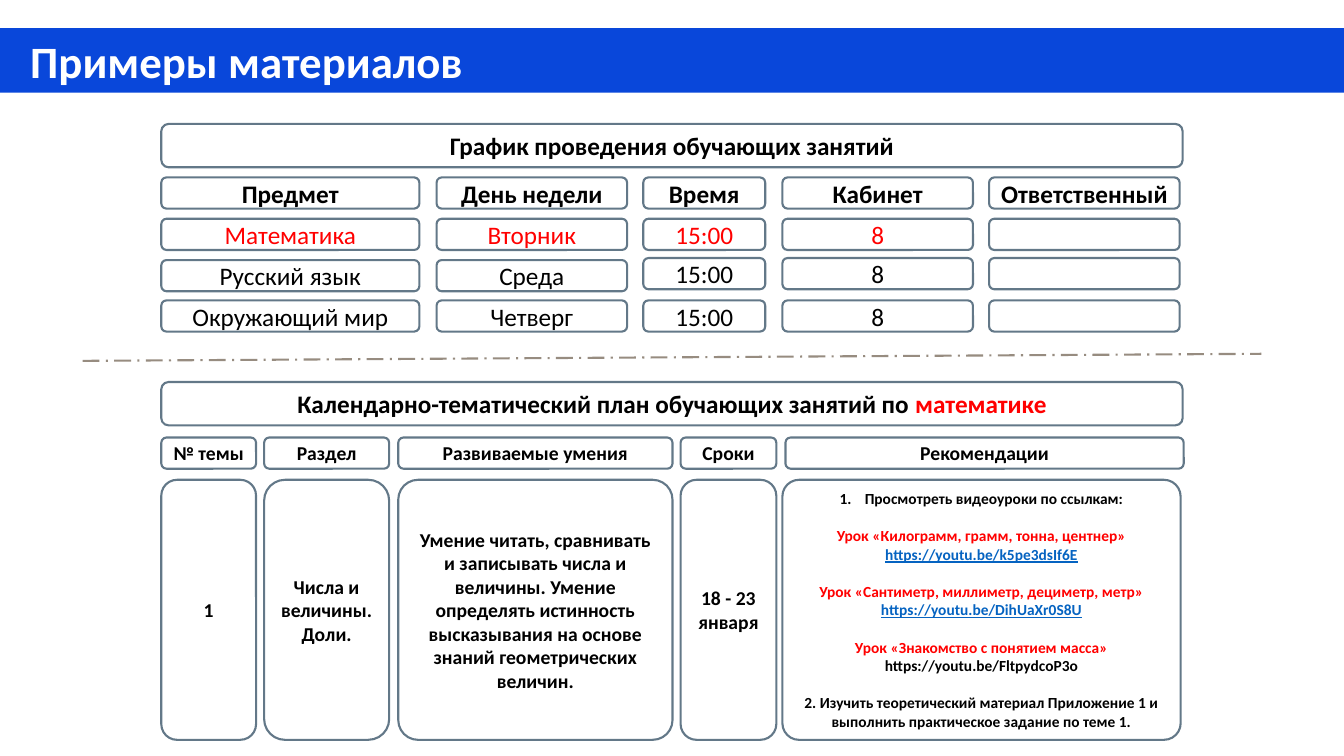
from dataclasses import dataclass
from typing import Any, Optional

from lxml.etree import SubElement
from pptx import Presentation
from pptx.dml.color import RGBColor
from pptx.enum.dml import MSO_LINE
from pptx.enum.shapes import MSO_CONNECTOR, MSO_SHAPE
from pptx.enum.text import MSO_ANCHOR, MSO_AUTO_SIZE, PP_ALIGN
from pptx.oxml.ns import qn
from pptx.util import Emu, Pt

EMU_PER_PX = 9144
COLORS = {
    "banner": "0947DA",
    "border": "637888",
    "divider": "978C80",
    "text": "000000",
    "accent": "FF0000",
    "link": "0563C1",
    "white": "FFFFFF",
}


@dataclass(frozen=True)
class Span:
    text: str
    color: str = "text"
    underline: bool = False


@dataclass(frozen=True)
class Line:
    spans: tuple[Span, ...]
    space_before: float = 0
    numbered: bool = False


@dataclass(frozen=True)
class Column:
    left: int
    width: int


@dataclass(frozen=True)
class ScheduleRow:
    top: int
    right_top: int
    values: tuple[str, ...]
    color: str = "text"
    bold: bool = False


@dataclass(frozen=True)
class Box:
    left: int
    top: int
    width: int
    height: int
    lines: tuple[Line, ...]
    size: int = 14
    bold: bool = True
    wrap: bool = False
    corner: Optional[float] = None


def px(value: int) -> Emu:
    return Emu(value * EMU_PER_PX)


def rgb(name: str) -> RGBColor:
    return RGBColor.from_string(COLORS[name])


def set_values(target: Any, values: dict[str, Any]) -> None:
    for name, value in values.items():
        setattr(target, name, value)


def line(text: str, color: str = "text", underline: bool = False,
         space_before: float = 0, numbered: bool = False) -> Line:
    return Line((Span(text, color, underline),), space_before, numbered)


def number_paragraph(paragraph: Any) -> None:
    properties = paragraph._p.get_or_add_pPr()
    properties.set("marL", str(px(25)))
    properties.set("indent", str(px(-25)))
    SubElement(properties, qn("a:buFont"), typeface="+mj-lt")
    SubElement(properties, qn("a:buAutoNum"), type="arabicPeriod")


def draw_title(slide: Any, text: str) -> None:
    title = slide.shapes.title
    set_values(title, {"left": 0, "top": px(28), "width": px(1333), "height": px(64)})
    title.fill.solid()
    title.fill.fore_color.rgb = rgb("banner")
    title.text_frame.text = text
    set_values(title.text_frame, {
        "word_wrap": True,
        "auto_size": MSO_AUTO_SIZE.NONE,
        "vertical_anchor": MSO_ANCHOR.TOP,
    })
    paragraph = title.text_frame.paragraphs[0]
    paragraph.alignment = PP_ALIGN.LEFT
    paragraph._p.get_or_add_pPr().set("marL", str(px(20)))
    font = paragraph.runs[0].font
    set_values(font, {"name": "Calibri", "size": Pt(32), "bold": True})
    font.color.rgb = rgb("white")


def draw_box(slide: Any, box: Box) -> None:
    shape = slide.shapes.add_shape(
        MSO_SHAPE.ROUNDED_RECTANGLE,
        px(box.left), px(box.top), px(box.width), px(box.height))
    shape.shadow.inherit = False
    shape.fill.background()
    shape.line.color.rgb = rgb("border")
    shape.line.width = Pt(1.5)
    if box.corner is not None:
        shape.adjustments[0] = box.corner
    frame = shape.text_frame
    set_values(frame, {"word_wrap": box.wrap, "vertical_anchor": MSO_ANCHOR.MIDDLE})
    for index, content in enumerate(box.lines):
        paragraph = frame.add_paragraph() if index else frame.paragraphs[0]
        paragraph.alignment = PP_ALIGN.CENTER
        if content.space_before:
            paragraph.space_before = Pt(content.space_before)
        if content.numbered:
            number_paragraph(paragraph)
        for span in content.spans:
            run = paragraph.add_run()
            run.text = span.text
            set_values(run.font, {
                "name": "Calibri",
                "size": Pt(box.size),
                "bold": box.bold,
                "underline": span.underline,
            })
            run.font.color.rgb = rgb(span.color)


def draw_schedule(slide: Any) -> None:
    columns = (Column(160, 256), Column(433, 189), Column(638, 121),
               Column(776, 189), Column(981, 189))
    rows = (
        ScheduleRow(176, 176, ("Предмет", "День недели", "Время", "Кабинет",
                               "Ответственный"), bold=True),
        ScheduleRow(217, 217, ("Математика", "Вторник", "15:00", "8", ""), "accent"),
        ScheduleRow(258, 256, ("Русский язык", "Среда", "15:00", "8", "")),
        ScheduleRow(298, 298, ("Окружающий мир", "Четверг", "15:00", "8", "")),
    )
    for row in rows:
        for index, (column, value) in enumerate(zip(columns, row.values)):
            top = row.top if index < 2 else row.right_top
            lines = (line(value, row.color),) if value else ()
            draw_box(slide, Box(column.left, top, column.width, 31, lines, 18, row.bold))


def draw_plan(slide: Any) -> None:
    columns = (Column(160, 94), Column(262, 124), Column(395, 272),
               Column(675, 95), Column(779, 395))
    headers = ("№ темы", "Раздел", "Развиваемые умения", "Сроки", "Рекомендации")
    for column, header in zip(columns, headers):
        draw_box(slide, Box(column.left, 434, column.width, 31, (line(header),)))

    details = (
        (line("1"),),
        (line("Числа и величины. Доли."),),
        (line("Умение читать, сравнивать и записывать числа и величины. Умение "
              "определять истинность высказывания на основе знаний "
              "геометрических величин."),),
        (line("18 - 23"), line("января")),
    )
    corners = (None, None, 0.076, None)
    for column, lines, corner in zip(columns, details, corners):
        draw_box(slide, Box(column.left, 476, column.width, 258, lines,
                            wrap=True, corner=corner))

    gap = 13.4
    recommendations = (
        line("Просмотреть видеоуроки по ссылкам:", numbered=True),
        line("Урок «Килограмм, грамм, тонна, центнер»", "accent", space_before=gap),
        line("https://youtu.be/k5pe3dsIf6E", "link", True),
        line("Урок «Сантиметр, миллиметр, дециметр, метр»", "accent", space_before=gap),
        line("https://youtu.be/DihUaXr0S8U", "link", True),
        line("Урок «Знакомство с понятием масса»", "accent", space_before=gap),
        line("https://youtu.be/FltpydcoP3o"),
        line("2. Изучить теоретический материал Приложение 1 и выполнить "
             "практическое задание по теме 1.", space_before=gap),
    )
    draw_box(slide, Box(776, 476, 395, 258, recommendations, 11, wrap=True, corner=0.064))


def draw_divider(slide: Any) -> None:
    divider = slide.shapes.add_connector(
        MSO_CONNECTOR.STRAIGHT, px(82), px(358), px(1251), px(351))
    divider.line.color.rgb = rgb("divider")
    set_values(divider.line, {"width": Pt(1.5), "dash_style": MSO_LINE.LONG_DASH_DOT})
    SubElement(divider._element.spPr, qn("a:effectLst"))


def main() -> None:
    presentation = Presentation()
    set_values(presentation, {"slide_width": px(1333), "slide_height": px(750)})
    slide = presentation.slides.add_slide(presentation.slide_layouts[5])
    draw_title(slide, "Примеры материалов")
    draw_box(slide, Box(160, 123, 1013, 43,
                        (line("График проведения обучающих занятий"),), 18))
    draw_schedule(slide)
    plan_heading = Line((Span("Календарно-тематический план обучающих занятий по "),
                         Span("математике", "accent")))
    draw_box(slide, Box(160, 379, 1013, 43, (plan_heading,), 18))
    draw_plan(slide)
    draw_divider(slide)
    presentation.save("out.pptx")


if __name__ == "__main__":
    main()
